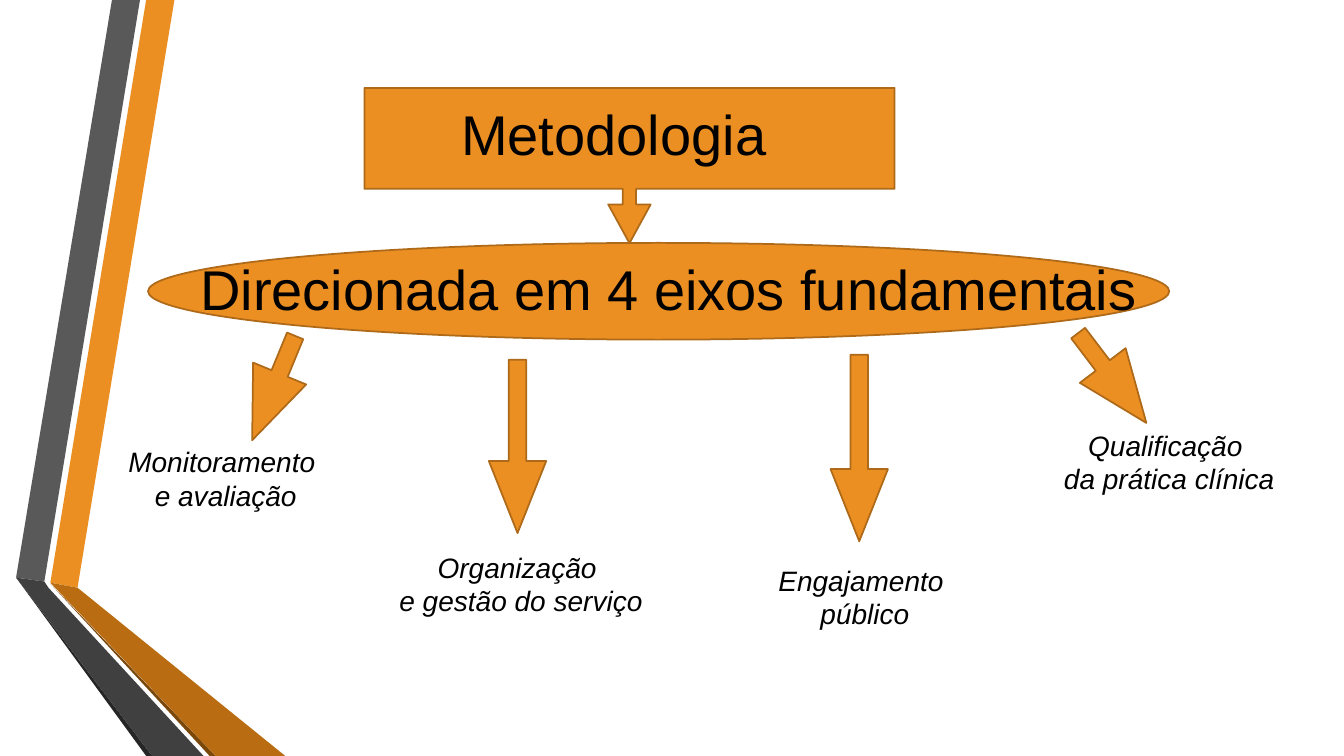
from pptx import Presentation
from pptx.dml.color import RGBColor
from pptx.enum import shapes, text
from pptx.util import Pt

ORANGE = RGBColor(0xEB, 0x8F, 0x22)
OUTLINE = RGBColor(0xAE, 0x6A, 0x19)
GREY = RGBColor(0x59, 0x59, 0x59)
CHARCOAL = RGBColor(0x40, 0x40, 0x40)
NEAR_BLACK = RGBColor(0x26, 0x26, 0x26)
BROWN = RGBColor(0xB9, 0x6C, 0x11)
DARK_BROWN = RGBColor(0x7B, 0x48, 0x0B)
BLACK = RGBColor(0, 0, 0)
FONT = "Arial"
ARROW_W = 41
LABEL_W, LABEL_H = 216, 55.5

RIBBONS = [
    (ORANGE, [(36, 416.2), (55.4, 419.8), (124.6, 0), (104.4, 0)]),
    (GREY, [(100, 0), (80, 0), (11.5, 412.6), (31.7, 415.4)]),
    (NEAR_BLACK, [(11.5, 412.6), (104.4, 540), (108.7, 540)]),
    (DARK_BROWN, [(36, 416.9), (149.8, 540), (154.1, 540)]),
    (BROWN, [(36, 416.2), (154.1, 540), (203.8, 540), (55.4, 419.8)]),
    (CHARCOAL, [(145.4, 540), (34.6, 419.8), (31.7, 415.4), (11.5, 412.6),
                (108.7, 540)]),
]

# label lines, label centre and top, arrow centre, top, height and rotation
AXES = [
    (["Monitoramento ", "e avaliação"], (161.3, 313.9), (195.5, 236.9, 80.6, 22.4)),
    (["Organização ", "e gestão do serviço"], (372.2, 389.5), (369.7, 257, 123.8, 0)),
    (["Engajamento ", "público"], (617.8, 398.9), (613.8, 253.4, 133.2, 0)),
    (["Qualificação ", "da prática clínica"], (835.2, 302.4), (794.5, 229.7, 80.6, 322.8)),
]


def add_filled(s, kind, x, y, w, h, rotation=0, adjustments=()):
    sp = s.shapes.add_shape(kind, Pt(x), Pt(y), Pt(w), Pt(h))
    sp.shadow.inherit = False
    sp.rotation = rotation
    for i, value in enumerate(adjustments):
        sp.adjustments[i] = value
    sp.fill.solid()
    sp.fill.fore_color.rgb = ORANGE
    sp.line.color.rgb = OUTLINE
    sp.line.width = Pt(1.25)


def add_text(s, lines, x, y, w, h, size, italic=False):
    tf = s.shapes.add_textbox(Pt(x), Pt(y), Pt(w), Pt(h)).text_frame
    tf.word_wrap = True
    tf.text = "\n".join(lines)
    for p in tf.paragraphs:
        p.alignment = text.PP_ALIGN.CENTER
        for r in p.runs:
            r.font.name = FONT
            r.font.size = Pt(size)
            r.font.italic = italic
            r.font.color.rgb = BLACK


def add_ribbons(s, x, y):
    for color, points in RIBBONS:
        start, *rest = [(Pt(x + px), Pt(y + py)) for px, py in points]
        builder = s.shapes.build_freeform(*start, scale=1.0)
        builder.add_line_segments(rest, close=True)
        sp = builder.convert_to_shape()
        sp.shadow.inherit = False
        sp.fill.solid()
        sp.fill.fore_color.rgb = color
        sp.line.fill.background()


def add_title(s, x, y, w, h):
    add_filled(s, shapes.MSO_SHAPE.LEFT_ARROW_CALLOUT,
               x + (w - h) / 2, y + (h - w) / 2, h, w, 270,
               (0.085, 0.137, 0.25, 0.65))
    add_text(s, ["Metodologia"], x + 59.5, y + 5, 237, 55.5, 40)


def add_subtitle(s, x, y, w, h):
    add_filled(s, shapes.MSO_SHAPE.OVAL, x, y, w, h)
    add_text(s, ["Direcionada em 4 eixos fundamentais"], x, y + 5, w + 13.7, 55.5, 40)


def add_axis(s, lines, label, arrow):
    center, top = label
    add_text(s, lines, center - LABEL_W / 2, top, LABEL_W, LABEL_H, 20, True)
    center, top, height, rotation = arrow
    add_filled(s, shapes.MSO_SHAPE.DOWN_ARROW, center - ARROW_W / 2, top,
               ARROW_W, height, rotation, (0.304, 1.256))


def main():
    prs = Presentation()
    prs.slide_width, prs.slide_height = Pt(960), Pt(540)
    s = prs.slides.add_slide(prs.slide_layouts[6])
    add_ribbons(s, 0, 0)
    add_subtitle(s, 105.8, 173.5, 729.4, 69.1)
    add_title(s, 260.3, 62.8, 378.7, 110.9)
    for axis in AXES:
        add_axis(s, *axis)
    prs.save("out.pptx")


if __name__ == "__main__":
    main()
